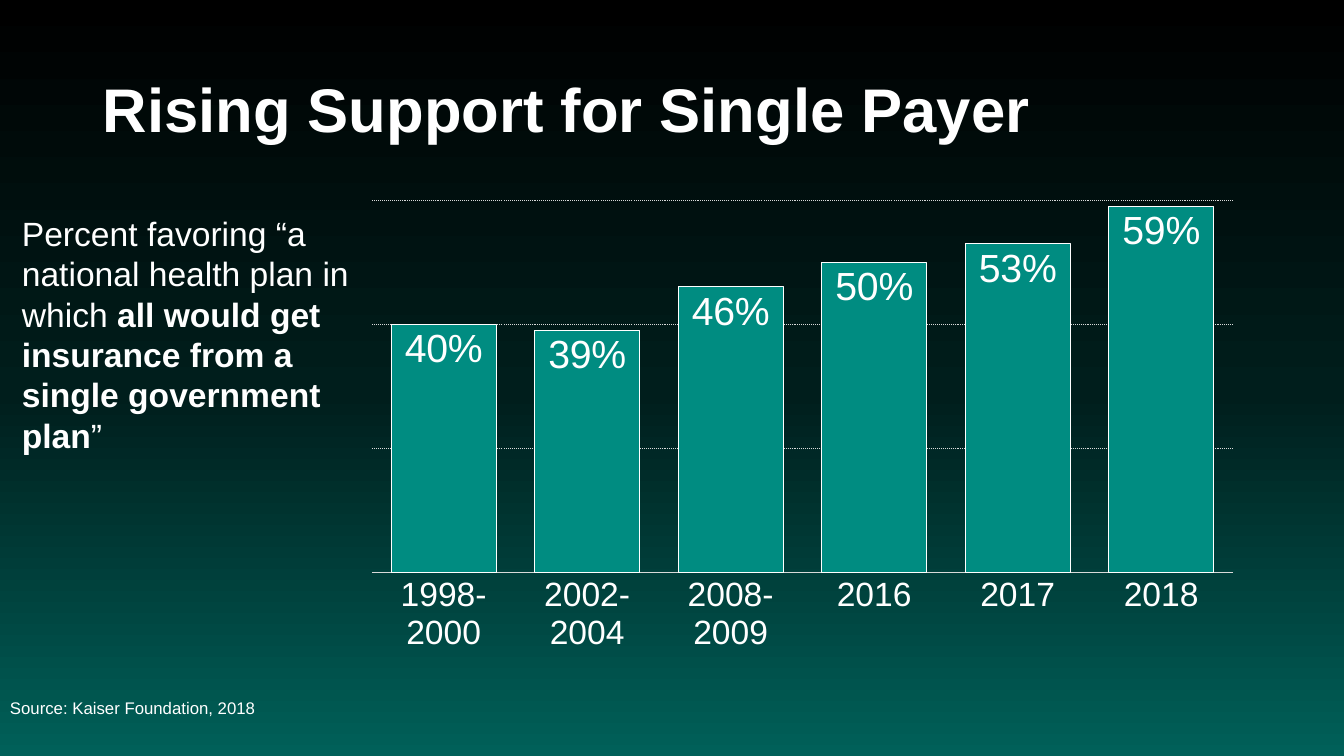
import copy
from dataclasses import dataclass

import pptx
import pptx.chart.data
import pptx.dml.color
import pptx.enum.chart
import pptx.enum.dml
import pptx.enum.text
import pptx.oxml
import pptx.oxml.ns
import pptx.util

EMU_PER_PX = 914400 / 100.8


@dataclass(frozen=True)
class Theme:
    font: str = "Arial"
    text: str = "FFFFFF"
    bar: str = "008C81"
    rule: str = "D9D9D9"
    background: tuple = ((0, "000000"), (0.52, "001E1C"), (1, "006059"))
    title_size: int = 44
    label_size: int = 28
    body_size: int = 24
    source_size: int = 12
    line_width: float = 0.75


THEME = Theme()


def px(length):
    return pptx.util.Emu(round(length * EMU_PER_PX))


def rgb(value):
    return pptx.dml.color.RGBColor.from_string(value)


def format_font(font, size, bold=False):
    values = {"name": THEME.font, "size": pptx.util.Pt(size), "bold": bold}
    for name, value in values.items():
        setattr(font, name, value)
    font.color.rgb = rgb(THEME.text)


def format_line(line, color):
    line.color.rgb = rgb(color)
    line.width = pptx.util.Pt(THEME.line_width)


def paint_background(slide):
    fill = slide.background.fill
    fill.gradient()
    fill.gradient_angle = 270
    stop_list = slide.element.find(".//" + pptx.oxml.ns.qn("a:gsLst"))
    stop_list.insert(1, copy.deepcopy(stop_list[0]))
    for stop, (position, color) in zip(fill.gradient_stops, THEME.background):
        stop.position = position
        stop.color.rgb = rgb(color)


def add_text(slide, box, runs, size, anchor, line_spacing=1.0):
    """Place one paragraph made of (text, bold) runs in the box."""
    frame = slide.shapes.add_textbox(*map(px, box)).text_frame
    frame.word_wrap = True
    frame.vertical_anchor = anchor
    paragraph = frame.paragraphs[0]
    paragraph.line_spacing = line_spacing
    for text, bold in runs:
        run = paragraph.add_run()
        run.text = text
        format_font(run.font, size, bold)


def place_plot(chart, **fractions):
    """Fix the inner plot area as fractions of the chart's box."""
    plot_area = chart.element.find(".//" + pptx.oxml.ns.qn("c:plotArea"))
    for layout in plot_area.findall(pptx.oxml.ns.qn("c:layout")):
        plot_area.remove(layout)
    settings = {"layoutTarget": "inner", "xMode": "edge", "yMode": "edge", **fractions}
    items = "".join(f'<c:{name} val="{value}"/>' for name, value in settings.items())
    plot_area.insert(0, pptx.oxml.parse_xml(
        f'<c:layout {pptx.oxml.ns.nsdecls("c")}>'
        f"<c:manualLayout>{items}</c:manualLayout></c:layout>"))


def format_axes(chart):
    category_axis = chart.category_axis
    category_axis.major_tick_mark = pptx.enum.chart.XL_TICK_MARK.NONE
    format_font(category_axis.tick_labels.font, THEME.body_size)
    format_line(category_axis.format.line, THEME.rule)

    value_axis = chart.value_axis
    values = {"visible": False, "minimum_scale": 0, "maximum_scale": 0.65,
              "major_unit": 0.2, "has_major_gridlines": True}
    for name, value in values.items():
        setattr(value_axis, name, value)
    grid_line = value_axis.major_gridlines.format.line
    format_line(grid_line, THEME.rule)
    grid_line.dash_style = pptx.enum.dml.MSO_LINE.ROUND_DOT


def format_bars(plot):
    values = {"gap_width": 37, "overlap": -27, "vary_by_categories": False,
              "has_data_labels": True}
    for name, value in values.items():
        setattr(plot, name, value)
    bars = plot.series[0].format
    bars.fill.solid()
    bars.fill.fore_color.rgb = rgb(THEME.bar)
    format_line(bars.line, THEME.text)

    labels = plot.data_labels
    values = {"show_value": True, "number_format": "0%", "number_format_is_linked": False,
              "position": pptx.enum.chart.XL_LABEL_POSITION.INSIDE_END}
    for name, value in values.items():
        setattr(labels, name, value)
    format_font(labels.font, THEME.label_size)


def add_support_chart(slide, box):
    support = {"1998-\n2000": 0.40, "2002-\n2004": 0.39, "2008-\n2009": 0.46,
               "2016": 0.50, "2017": 0.53, "2018": 0.59}
    data = pptx.chart.data.CategoryChartData(number_format="0%")
    data.categories = list(support)
    data.add_series("Series 1", list(support.values()))
    chart = slide.shapes.add_chart(
        pptx.enum.chart.XL_CHART_TYPE.COLUMN_CLUSTERED, *map(px, box), data).chart
    chart.has_legend = False
    chart.has_title = False
    format_font(chart.font, THEME.body_size)
    format_axes(chart)
    format_bars(chart.plots[0])
    place_plot(chart, x=0.02, y=0.02, w=0.96, h=0.8)


def build_support_slide(presentation):
    slide = presentation.slides.add_slide(presentation.slide_layouts[6])
    anchor = pptx.enum.text.MSO_ANCHOR
    paint_background(slide)
    add_text(slide, (93, 40, 1159, 146), [("Rising Support for Single Payer", True)],
             THEME.title_size, anchor.MIDDLE, 0.9)
    add_text(slide, (0, 663, 907, 93), [("Source: Kaiser Foundation, 2018", False)],
             THEME.source_size, anchor.MIDDLE, 0.9)
    question = [("Percent favoring “a national health plan in which ", False),
                ("all would get insurance from a single government plan", True),
                ("”", False)]
    add_text(slide, (12, 208, 355, 254), question, THEME.body_size, anchor.TOP)
    add_support_chart(slide, (354, 159, 897, 504))


def main():
    presentation = pptx.Presentation()
    presentation.slide_width = px(1344)
    presentation.slide_height = px(756)
    build_support_slide(presentation)
    presentation.save("out.pptx")


if __name__ == "__main__":
    main()
